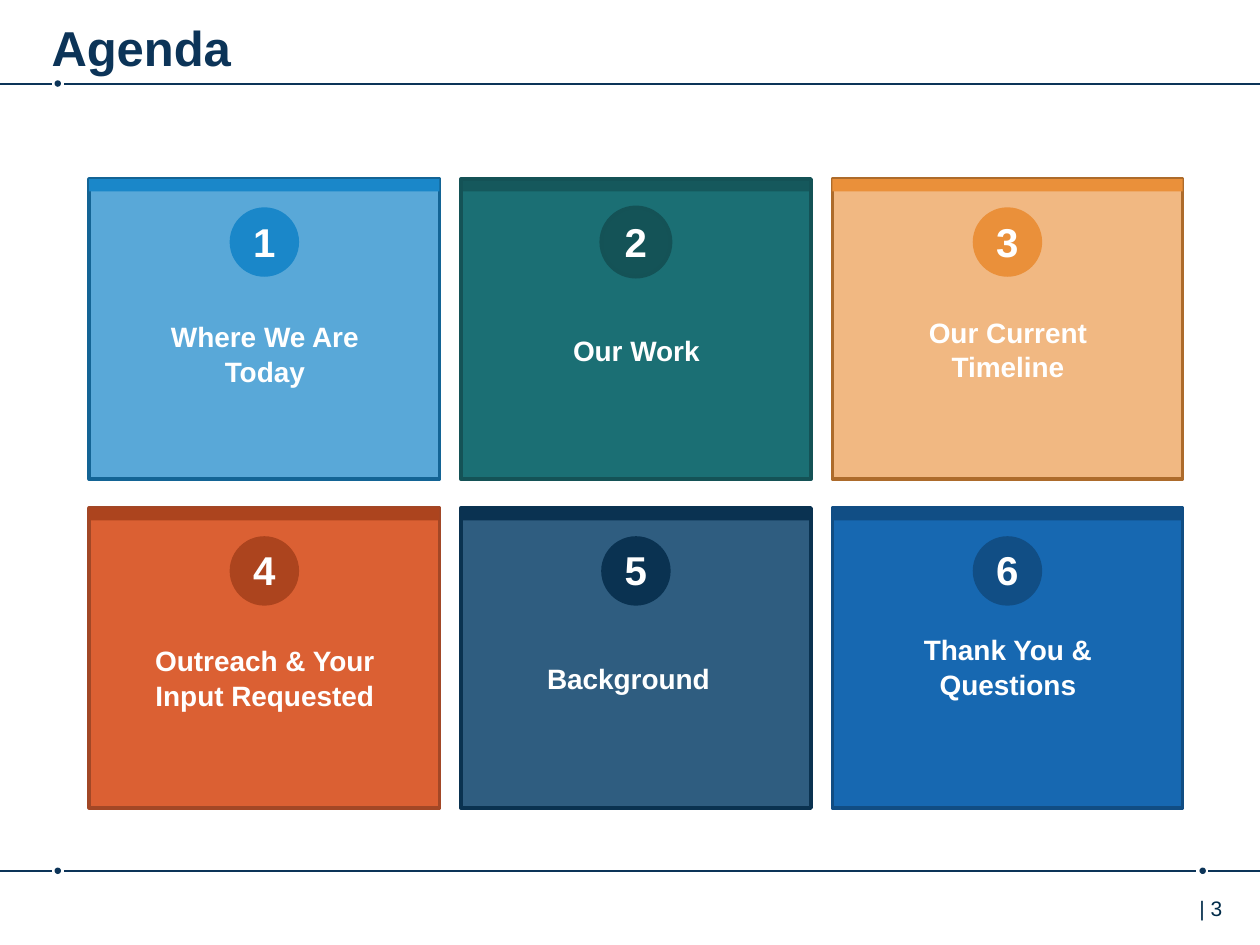
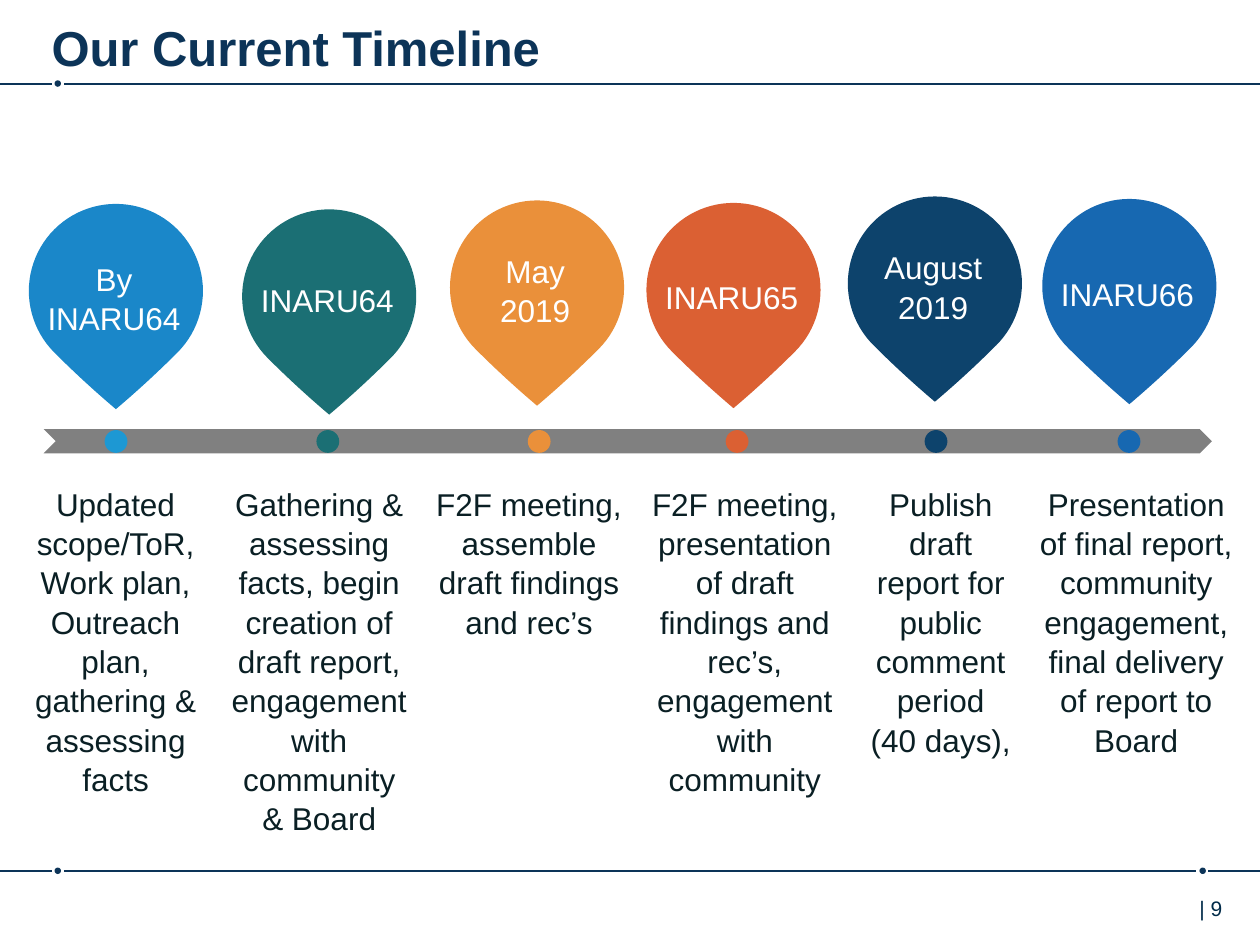
"""Build the agenda and timeline slides."""
from dataclasses import dataclass
from typing import NamedTuple, Optional

from lxml import etree
from pptx import Presentation
from pptx.dml.color import RGBColor
from pptx.enum import shapes, text
from pptx.oxml import ns
from pptx.util import Cm, Pt


@dataclass(frozen=True)
class Theme:
    font: str = "Arial"
    navy: str = "0C3458"
    footer: str = "002B49"
    body: str = "0A1F24"
    white: str = "FFFFFF"
    grey: str = "808080"
    sky: str = "1A87C9"
    sky_edge: str = "136495"
    sky_dot: str = "1D98D3"
    teal: str = "1B6F74"
    teal_dark: str = "145357"
    teal_edge: str = "145256"
    amber: str = "EA903A"
    amber_edge: str = "AD6B2B"
    rust: str = "DB6033"
    rust_dark: str = "AC441E"
    rust_edge: str = "A24726"
    deep: str = "0D436C"
    deep_dark: str = "0A3251"
    deep_edge: str = "0A3250"
    blue: str = "1768B1"
    blue_dark: str = "114E85"
    blue_edge: str = "114D83"
    title_size: float = 28
    number_size: float = 23
    milestone_size: float = 18
    topic_size: float = 16
    footer_size: float = 12
    line_spacing: float = 1.04


THEME = Theme()


class Card(NamedTuple):
    topic: str
    fill: str
    accent: str
    edge: str
    topic_drop: float
    topic_shift: float = 0
    opacity: int = 100
    bar_opacity: int = 100
    ring: Optional[str] = None


class Milestone(NamedTuple):
    when: str
    colour: str
    dot_colour: str
    pin_left: float
    pin_top: float
    when_top: float
    dot_left: float
    note: str
    note_left: float
    note_width: float
    note_lines: int


CARDS = [
    Card("Where We Are Today", THEME.sky, THEME.sky, THEME.sky_edge, 2.69, opacity=72),
    Card("Our Work", THEME.teal, THEME.teal_dark, THEME.teal_edge, 2.97,
         bar_opacity=80, ring=THEME.teal_edge),
    Card("Our Current Timeline", THEME.amber, THEME.amber, THEME.amber_edge, 2.59, opacity=63),
    Card("Outreach & Your Input Requested", THEME.rust, THEME.rust_dark, THEME.rust_edge, 2.59),
    Card("Background", THEME.deep, THEME.deep_dark, THEME.deep_edge, 2.94, -0.16, opacity=86),
    Card("Thank You & Questions", THEME.blue, THEME.blue_dark, THEME.blue_edge, 2.36),
]

MILESTONES = [
    Milestone("By\nINARU64", THEME.sky, THEME.sky_dot, 0.58, 4.11, 5.08, 2.11,
              "Updated scope/ToR,\vWork plan, Outreach plan, gathering & assessing facts",
              0.3, 4.06, 8),
    Milestone("INARU64", THEME.teal, THEME.teal, 4.88, 4.22, 5.51, 6.38,
              "Gathering & assessing facts, begin creation of draft report, "
              "engagement with community & Board", 4.39, 4.09, 9),
    Milestone("May\n2019", THEME.amber, THEME.amber, 9.07, 4.04, 4.93, 10.64,
              "F2F meeting, assemble draft findings and rec’s", 8.53, 4.27, 4),
    Milestone("INARU65", THEME.rust, THEME.rust, 13.03, 4.09, 5.46, 14.63,
              "F2F meeting, presentation of draft findings and rec’s, "
              "engagement with community", 12.88, 4.27, 8),
    Milestone("August 2019", THEME.deep, THEME.deep, 17.09, 3.96, 4.85, 18.64,
              "Publish draft report for public comment period\v(40 days),", 17.2, 3.53, 7),
    Milestone("INARU66", THEME.blue, THEME.blue, 21.01, 4.01, 5.38, 22.53,
              "Presentation of final report, community engagement, "
              "final delivery of report to Board", 20.57, 4.67, 7),
]


def add_text(slide, words: str, left: float, top: float, width: float, height: float, *,
             size: float, colour: str = THEME.white, bold: bool = False,
             centred: bool = True, side_inset: float = 0.25, grow: bool = True):
    """Add a wrapped text box, one paragraph per line of words."""
    frame = slide.shapes.add_textbox(Cm(left), Cm(top), Cm(width), Cm(height)).text_frame
    frame.word_wrap = True
    frame.auto_size = (text.MSO_AUTO_SIZE.SHAPE_TO_FIT_TEXT if grow
                       else text.MSO_AUTO_SIZE.NONE)
    frame.margin_left = frame.margin_right = Cm(side_inset)
    frame.text = words
    for paragraph in frame.paragraphs:
        paragraph.alignment = text.PP_ALIGN.CENTER if centred else text.PP_ALIGN.LEFT
        paragraph.line_spacing = THEME.line_spacing
        for run in paragraph.runs:
            run.font.name = THEME.font
            run.font.size = Pt(size)
            run.font.bold = bold
            run.font.color.rgb = RGBColor.from_string(colour)


def add_block(slide, preset, left: float, top: float, width: float, height: float,
              fill: str, *, edge: Optional[str] = None, opacity: int = 100):
    """Add a filled preset shape with an optional outline and opacity."""
    block = slide.shapes.add_shape(preset, Cm(left), Cm(top), Cm(width), Cm(height))
    block.shadow.inherit = False
    block.fill.solid()
    block.fill.fore_color.rgb = RGBColor.from_string(fill)
    if opacity < 100:
        colour = block.fill._xPr.find(".//" + ns.qn("a:srgbClr"))
        etree.SubElement(colour, ns.qn("a:alpha"), val=str(opacity * 1000))
    if edge:
        block.line.color.rgb = RGBColor.from_string(edge)
        block.line.width = Pt(2)
    else:
        block.line.fill.background()
    return block


def add_rule(slide, start: float, end: float, y: float):
    """Add one segment of a horizontal rule."""
    rule = slide.shapes.add_connector(shapes.MSO_CONNECTOR.STRAIGHT,
                                      Cm(start), Cm(y), Cm(end), Cm(y))
    rule.line.color.rgb = RGBColor.from_string(THEME.navy)
    rule.line.width = Pt(1)
    etree.SubElement(rule._element.spPr, ns.qn("a:effectLst"))


def add_page(deck, title: str, number: int):
    """Add a slide with the shared title, dotted rules and page number."""
    slide = deck.slides.add_slide(deck.slide_layouts[6])
    header_y, footer_y = 1.69, 17.56
    for start, end, y in [(0, 1.04, header_y), (1.3, 25.4, header_y), (0, 1.04, footer_y),
                          (1.3, 24.1, footer_y), (24.36, 25.4, footer_y)]:
        add_rule(slide, start, end, y)
    for left, y in [(1.1, header_y), (1.1, footer_y), (24.18, footer_y)]:
        add_block(slide, shapes.MSO_SHAPE.OVAL, left, y - 0.07, 0.13, 0.13, THEME.navy)
    add_text(slide, title, 1.04, 0.18, 22.25, 1.24, size=THEME.title_size,
             colour=THEME.navy, bold=True, centred=False, side_inset=0, grow=False)
    add_text(slide, f"| {number}", 23.93, 17.91, 1.4, 1.02, size=THEME.footer_size,
             colour=THEME.footer, centred=False, grow=False)
    return slide


def add_card(slide, card: Card, number: int, left: float, top: float,
             width: float, height: float):
    """Draw one numbered agenda card."""
    badge = 1.4
    add_block(slide, shapes.MSO_SHAPE.RECTANGLE, left, top, width, height, card.fill,
              edge=card.edge, opacity=card.opacity)
    add_block(slide, shapes.MSO_SHAPE.RECTANGLE, left, top, width, 0.25, card.accent,
              opacity=card.bar_opacity)
    add_block(slide, shapes.MSO_SHAPE.OVAL, left + (width - badge) / 2, top + 0.57,
              badge, badge, card.accent, edge=card.ring)
    add_text(slide, str(number), left, top + 0.6, width, 1.24,
             size=THEME.number_size, bold=True)
    add_text(slide, card.topic, left + 0.66 + card.topic_shift, top + card.topic_drop,
             width - 1.3, 1.63, size=THEME.topic_size, bold=True)


def add_milestone(slide, stop: Milestone):
    """Draw one pin with its date, its dot on the arrow and its note."""
    add_block(slide, shapes.MSO_SHAPE.OVAL, stop.dot_left, 8.67, 0.46, 0.46, stop.dot_colour)
    pin = add_block(slide, shapes.MSO_SHAPE.TEAR, stop.pin_left, stop.pin_top,
                    3.51, 3.51, stop.colour)
    pin.adjustments[0] = 0.96
    pin.rotation = 135
    when_lines = len(stop.when.split())
    add_text(slide, stop.when, stop.pin_left + 0.07, stop.when_top, 3.3,
             0.25 + 0.77 * when_lines, size=THEME.milestone_size)
    add_text(slide, stop.note, stop.note_left, 9.62, stop.note_width,
             0.25 + 0.77 * stop.note_lines, size=THEME.milestone_size, colour=THEME.body)


def build_agenda(deck):
    """Lay the agenda cards out in three columns and two rows."""
    slide = add_page(deck, "Agenda", 3)
    for index, card in enumerate(CARDS):
        row, column = divmod(index, 3)
        add_card(slide, card, index + 1, 1.8 + 7.49 * column, 3.61 + 6.63 * row, 7.06, 6.05)


def build_timeline(deck):
    """Lay the milestones out along the arrow."""
    slide = add_page(deck, "Our Current Timeline", 9)
    add_block(slide, shapes.MSO_SHAPE.CHEVRON, 0.88, 8.65, 23.55, 0.49, THEME.grey)
    for stop in MILESTONES:
        add_milestone(slide, stop)


def main():
    """Build and save the deck."""
    deck = Presentation()
    deck.slide_width, deck.slide_height = Cm(25.4), Cm(19.05)
    build_agenda(deck)
    build_timeline(deck)
    deck.save("out.pptx")


if __name__ == "__main__":
    main()
